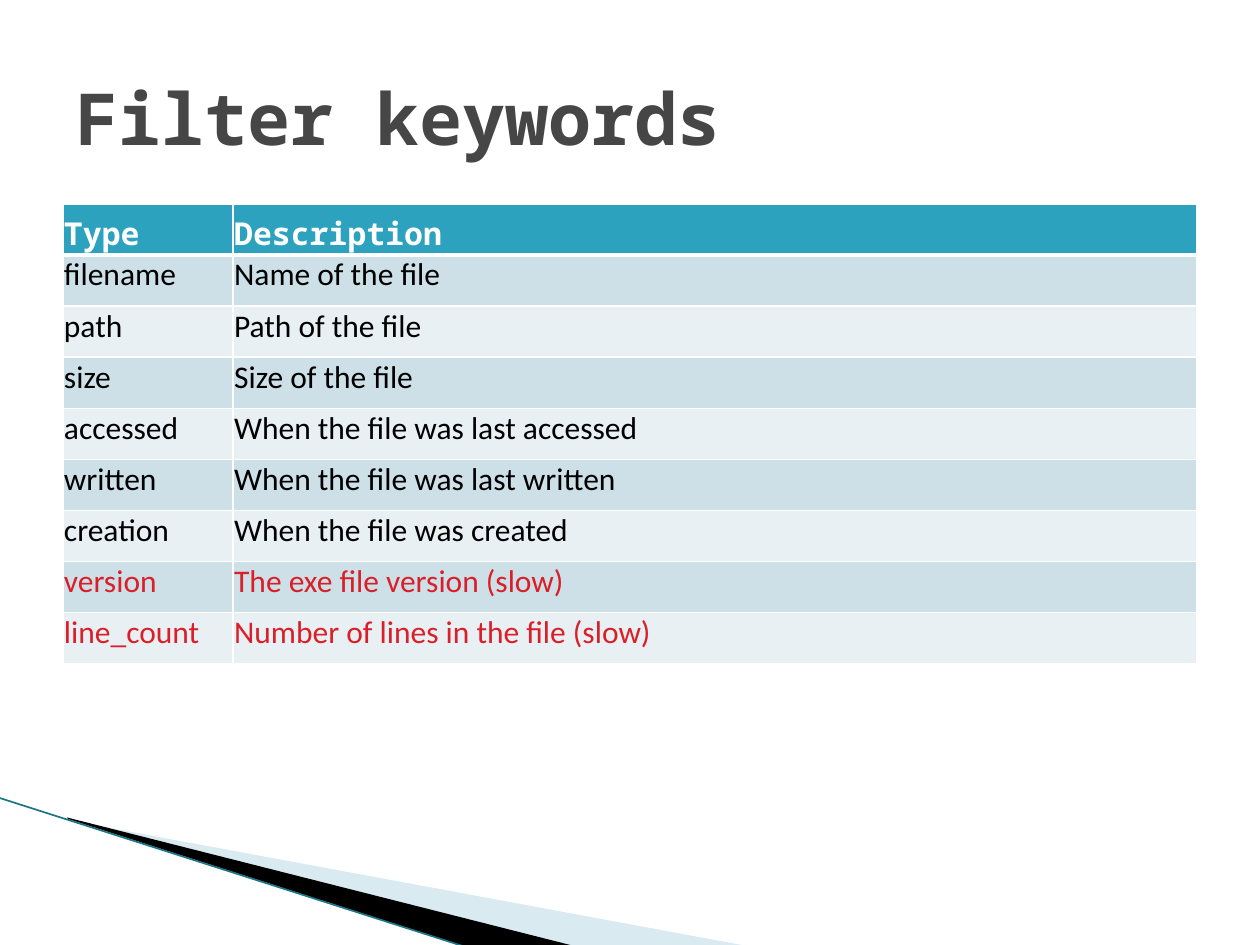
from lxml.etree import SubElement
from pptx import Presentation
from pptx.dml.color import RGBColor
from pptx.enum.shapes import MSO_CONNECTOR
from pptx.enum.text import MSO_ANCHOR
from pptx.oxml.ns import qn
from pptx.util import Cm, Pt

# Content
TITLE = "Filter keywords"
HEAD = ("Type", "Description")
ROWS = [
    ("filename", "Name of the file"),
    ("path", "Path of the file"),
    ("size", "Size of the file"),
    ("accessed", "When the file was last accessed"),
    ("written", "When the file was last written"),
    ("creation", "When the file was created"),
    ("version", "The exe file version (slow)"),
    ("line_count", "Number of lines in the file (slow)"),
]
SLOW = ("version", "line_count")


class Theme:
    mono, sans = "Noto Sans Mono", "Calibri"
    title, body = 41, 18
    grey, white, black, red = "464646", "FFFFFF", "000000", "DA1F28"
    head, bands = "2DA2BF", ("CDE0E8", "E8F0F4")
    pale, teal = "A0CBDC", "1B7587"


# Corner wedges in cm: points, colour, opacity in percent
WEDGES = [
    ([(1.4, 16.54), (15.11, 19.08), (11.58, 19.08), (1.4, 16.51)], Theme.pale, 40),
    ([(1.35, 16.48), (11.61, 19.08), (9.45, 19.1), (1.37, 16.51)], Theme.black, 100),
]
EDGE = (-0.03, 16.08, 9.42, 19.1)
LEFT, WIDTH, TOP = 1.27, 22.86, 4.11
FIRST, ROW = 3.43, 1.03


def rgb(code):
    return RGBColor.from_string(code)


def write(frame, text, face, size, color, bold):
    para = frame.paragraphs[0]
    para.text = text
    font = para.font
    font.name, font.size, font.bold = face, Pt(size), bold
    font.color.rgb = rgb(color)


def wedge(shapes, points, color, alpha):
    start, *rest = [(Cm(x), Cm(y)) for x, y in points]
    path = shapes.build_freeform(*start)
    path.add_line_segments(rest)
    shape = path.convert_to_shape()
    shape.shadow.inherit = False
    shape.line.fill.background()
    shape.fill.solid()
    shape.fill.fore_color.rgb = rgb(color)
    if alpha < 100:
        tint = shape.fill._xPr.find(qn("a:solidFill"))[0]
        SubElement(tint, qn("a:alpha"), val=str(alpha * 1000))


def border(cell, base):
    props = cell._tc.get_or_add_tcPr()
    sides = (("lnL", 1), ("lnR", 1), ("lnT", 1), ("lnB", base))
    for spot, (side, size) in enumerate(sides):
        line = props.makeelement(qn("a:" + side), {"w": str(Pt(size))})
        fill = SubElement(line, qn("a:solidFill"))
        SubElement(fill, qn("a:srgbClr"), val=Theme.white)
        props.insert(spot, line)


deck = Presentation()
deck.slide_width, deck.slide_height = Cm(25.4), Cm(19.05)
slide = deck.slides.add_slide(deck.slide_layouts[6])
shapes = slide.shapes

# Corner decoration
for item in WEDGES:
    wedge(shapes, *item)
edge = shapes.add_connector(MSO_CONNECTOR.STRAIGHT, *[Cm(v) for v in EDGE])
edge.line.color.rgb = rgb(Theme.teal)
edge.line.width = Pt(0.95)
SubElement(edge._element.spPr, qn("a:effectLst"))

# Keyword table
data = [HEAD] + ROWS
table = shapes.add_table(len(data), len(HEAD), Cm(LEFT), Cm(TOP),
                         Cm(WIDTH), Cm(ROW * len(data))).table
table.columns[0].width = Cm(FIRST)
table.columns[1].width = Cm(WIDTH - FIRST)
for i, row in enumerate(data):
    table.rows[i].height = Cm(ROW)
    if i == 0:
        back, style = Theme.head, (Theme.mono, Theme.body, Theme.white, True)
    else:
        ink = Theme.red if row[0] in SLOW else Theme.black
        back = Theme.bands[(i - 1) % 2]
        style = (Theme.sans, Theme.body, ink, False)
    for j, text in enumerate(row):
        cell = table.cell(i, j)
        cell.margin_left = cell.margin_right = cell.margin_top = Cm(0.02)
        cell.margin_bottom = 0
        cell.vertical_anchor = MSO_ANCHOR.TOP if i else MSO_ANCHOR.BOTTOM
        cell.fill.solid()
        cell.fill.fore_color.rgb = rgb(back)
        border(cell, 1 if i else 3)
        write(cell.text_frame, text, *style)

# Title
box = shapes.add_textbox(Cm(LEFT), Cm(0.76), Cm(WIDTH), Cm(3.18)).text_frame
box.word_wrap = True
box.vertical_anchor = MSO_ANCHOR.MIDDLE
write(box, TITLE, Theme.mono, Theme.title, Theme.grey, True)

deck.save("out.pptx")
